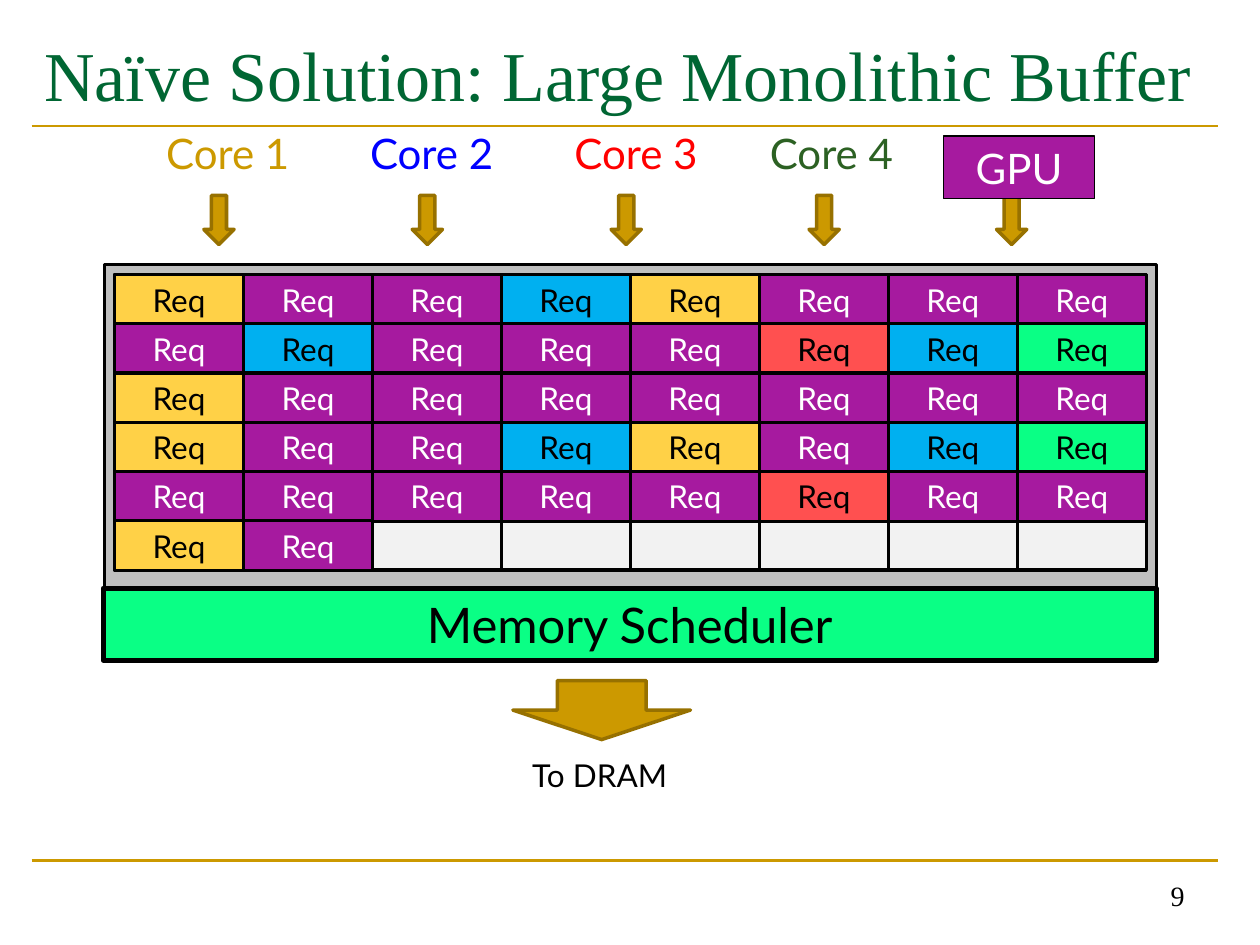
from dataclasses import dataclass

from lxml import etree
from pptx import Presentation
from pptx import util as u
from pptx.dml import color
from pptx.enum import shapes, text
from pptx.oxml import ns

BLACK, WHITE, GOLD, PURPLE, GREEN = "000000", "FFFFFF", "CC9900", "A61A9F", "0AFF85"
RECT, ARROW = shapes.MSO_SHAPE.RECTANGLE, shapes.MSO_SHAPE.DOWN_ARROW
SANS, SERIF = "Lato", "Times New Roman"


@dataclass
class Box:
    """Position and size in centimetres."""
    left: float
    top: float
    width: float
    height: float

    def lengths(self) -> list:
        return [u.Cm(n) for n in (self.left, self.top, self.width, self.height)]


@dataclass
class Source:
    """A requester above the buffer, with its label and arrow positions."""
    name: str
    colour: str
    label_left: float
    arrow_left: float


@dataclass
class Request:
    fill: str
    ink: str = BLACK


CORES = [
    Source("Core 1", GOLD, 3.1, 4.11),
    Source("Core 2", "0000FF", 7.21, 8.31),
    Source("Core 3", "FF0000", 11.33, 12.32),
    Source("Core 4", "2C6123", 15.27, 16.31),
]
GPU = Source("GPU", PURPLE, 19.02, 20.09)

REQUESTS = {
    "1": Request("FFD147"),
    "2": Request("00B0F0"),
    "3": Request("FF5050"),
    "4": Request(GREEN),
    "G": Request(PURPLE, WHITE),
}
# One letter per buffered request: core number, or G for the GPU.
BUFFER = ["1GG21GGG", "G2GGG324", "1GGGGGGG", "1GG21G24", "GGGGG3GG", "1G"]
COLUMNS = 8


def rgb(value: str) -> color.RGBColor:
    return color.RGBColor.from_string(value)


def write(frame, words: str, size: float, font: str = SANS, ink: str = BLACK,
          align=text.PP_ALIGN.LEFT, anchor=text.MSO_ANCHOR.TOP, grow: bool = True) -> None:
    frame.word_wrap = True
    frame.auto_size = (text.MSO_AUTO_SIZE.SHAPE_TO_FIT_TEXT if grow
                       else text.MSO_AUTO_SIZE.NONE)
    frame.vertical_anchor = anchor
    para = frame.paragraphs[0]
    para.alignment = align
    span = para.add_run()
    span.text = words
    span.font.size = u.Pt(size)
    span.font.name = font
    span.font.color.rgb = rgb(ink)


def add_label(page, box: Box, words: str, size: float, **style) -> None:
    write(page.shapes.add_textbox(*box.lengths()).text_frame, words, size, **style)


def add_block(page, kind, box: Box, fill: str, line: str = BLACK, weight: float = 2,
              words: str = "", size: float = 18, ink: str = BLACK) -> None:
    block = page.shapes.add_shape(kind, *box.lengths())
    block.shadow.inherit = False
    block.fill.solid()
    block.fill.fore_color.rgb = rgb(fill)
    block.line.color.rgb = rgb(line)
    block.line.width = u.Pt(weight)
    if words:
        write(block.text_frame, words, size, ink=ink, align=text.PP_ALIGN.CENTER)


def add_arrow(page, box: Box) -> None:
    add_block(page, ARROW, box, GOLD, "977100")


def add_rule(page, top: float) -> None:
    rule = page.shapes.add_connector(shapes.MSO_CONNECTOR.STRAIGHT, u.Cm(0.64), u.Cm(top),
                                     u.Cm(24.56), u.Cm(top))
    rule.line.color.rgb = rgb(GOLD)
    rule.line.width = u.Pt(1.5)
    etree.SubElement(rule._element.spPr, ns.qn("a:effectLst"))


def slot(row: int, column: int, height: float) -> Box:
    return Box(2.31 + 2.6 * column, 5.54 + 0.99 * row, 2.6, height)


def add_buffer(page) -> None:
    for row in range(len(BUFFER)):
        for column in range(COLUMNS):
            add_block(page, RECT, slot(row, column, 1), "F2F2F2")
    for row, owners in enumerate(BUFFER):
        for column, owner in enumerate(owners):
            request = REQUESTS[owner]
            add_block(page, RECT, slot(row, column, 1.02), request.fill, weight=1.75,
                      words="Req", ink=request.ink)


def main() -> None:
    deck = Presentation()
    deck.slide_width, deck.slide_height = u.Cm(25.4), u.Cm(19.05)
    page = deck.slides.add_slide(deck.slide_layouts[5])

    title = page.shapes.title
    title.left, title.top, title.width, title.height = Box(0.64, 0.43, 23.92, 2.11).lengths()
    write(title.text_frame, "Naïve Solution: Large Monolithic Buffer", 40, font=SERIF,
          ink="006633", anchor=text.MSO_ANCHOR.MIDDLE, grow=False)
    for top in (2.54, 17.35):
        add_rule(page, top)
    add_label(page, Box(18.21, 17.25, 5.92, 1.27), "9", 16, font=SERIF, grow=False,
              align=text.PP_ALIGN.RIGHT, anchor=text.MSO_ANCHOR.BOTTOM)

    add_block(page, RECT, Box(2.11, 5.33, 21.21, 6.6), "BFBFBF")
    add_block(page, RECT, Box(2.08, 11.86, 21.23, 1.45), GREEN, weight=3,
              words="Memory Scheduler", size=28)
    add_buffer(page)

    for source in CORES + [GPU]:
        add_arrow(page, Box(source.arrow_left, 3.94, 0.61, 0.99))
    for core in CORES:
        add_label(page, Box(core.label_left, 2.44, 3.05, 1.27), core.name, 24,
                  ink=core.colour)
    add_block(page, RECT, Box(GPU.label_left, 2.74, 3.05, 1.27), GPU.colour, weight=0.75,
              words=GPU.name, size=24, ink=WHITE)

    add_arrow(page, Box(10.34, 13.72, 3.58, 1.19))
    add_label(page, Box(7.29, 15.11, 9.6, 1.02), "To DRAM", 18, align=text.PP_ALIGN.CENTER)
    deck.save("out.pptx")


if __name__ == "__main__":
    main()
